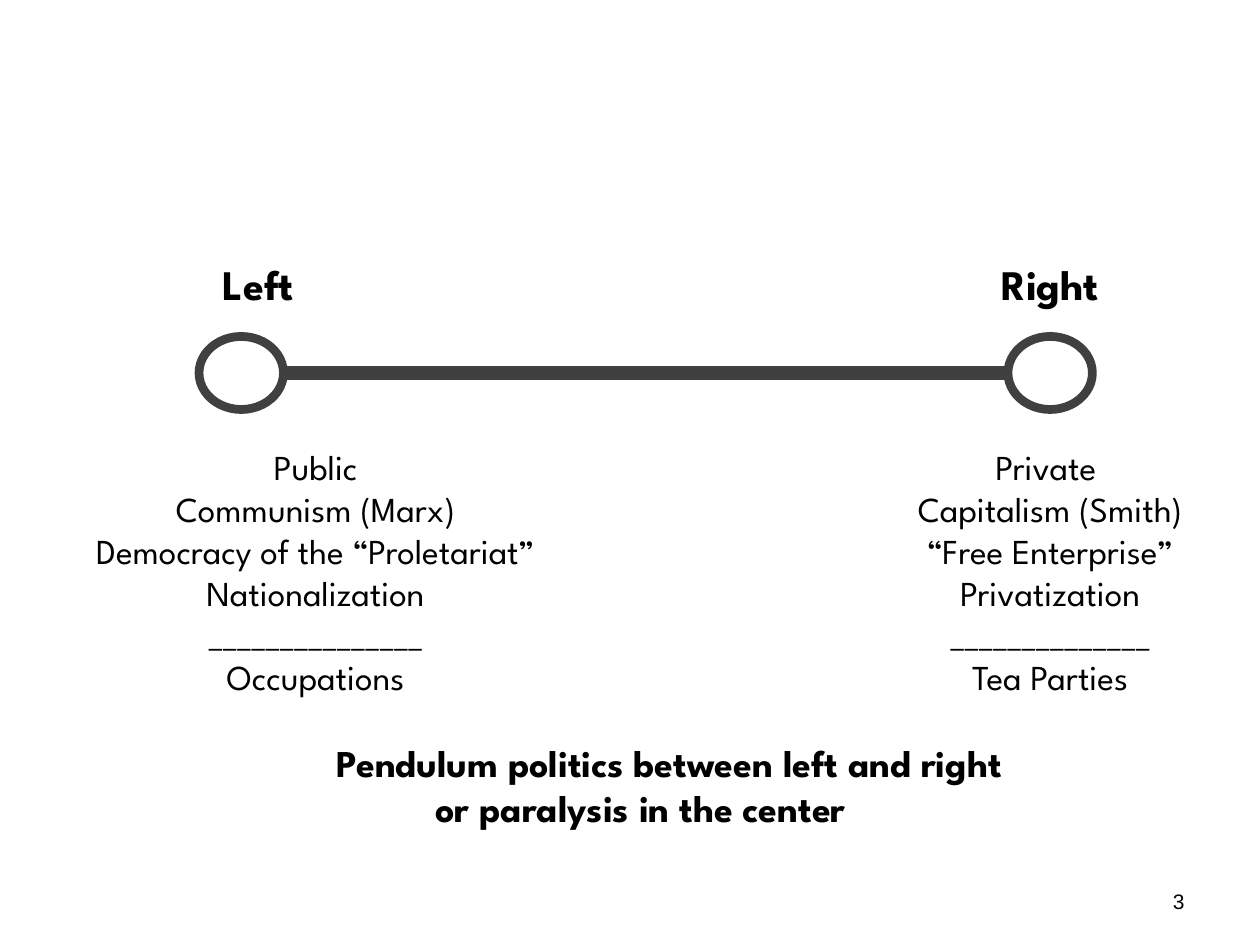
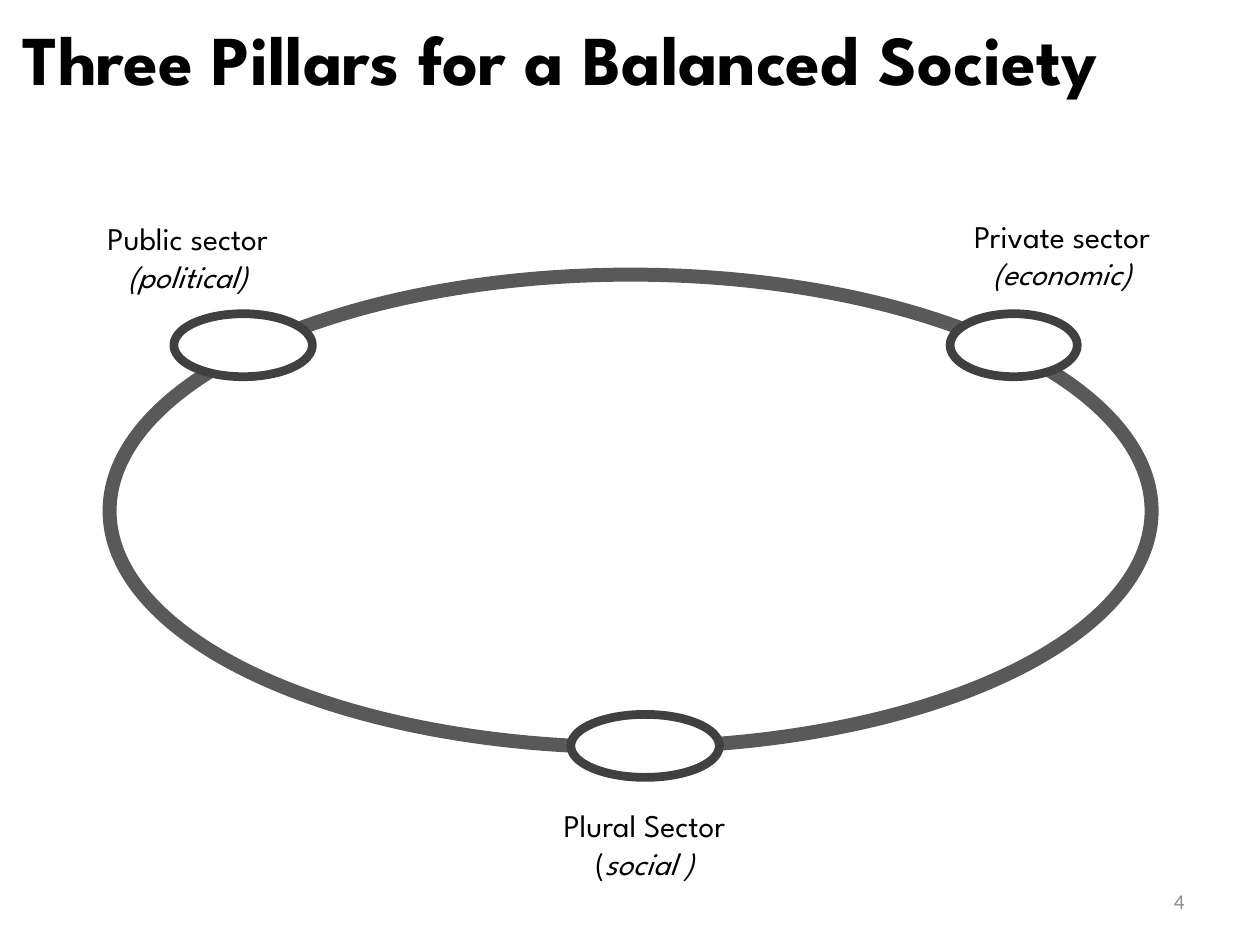
from lxml.etree import SubElement
from pptx import Presentation
from pptx.dml.color import RGBColor
from pptx.enum.shapes import MSO_CONNECTOR, MSO_SHAPE
from pptx.enum.text import MSO_ANCHOR, PP_ALIGN
from pptx.oxml.ns import qn
from pptx.util import Inches, Pt

# Grid of tenth-of-an-inch cells covering a 4:3 slide
COLUMNS, ROWS = 100, 75
CELL = Inches(0.1)

BLACK = RGBColor(0x00, 0x00, 0x00)
WHITE = RGBColor(0xFF, 0xFF, 0xFF)
DARK = RGBColor(0x40, 0x40, 0x40)
RING = RGBColor(0x59, 0x59, 0x59)
MUTED = RGBColor(0x8C, 0x8C, 0x8C)

FONT = "League Spartan"
NODE_LINE, LINK_LINE = 5, 8
LIST_GAP = 78  # points between a heading and its list, room for the node


def cells(*counts):
    return [round(count * CELL) for count in counts]


def style_span(span, size, bold=False, italic=False, font=FONT, color=BLACK):
    span.font.name = font
    span.font.size = Pt(size)
    span.font.bold = bold
    span.font.italic = italic
    span.font.color.rgb = color


def add_text(page, area, lines, size, align=PP_ALIGN.CENTER,
             anchor=MSO_ANCHOR.TOP, **style):
    """Add a text box with one paragraph per line and return its paragraphs."""
    frame = page.shapes.add_textbox(*cells(*area)).text_frame
    frame.word_wrap = True
    frame.vertical_anchor = anchor
    frame.text = "\n".join(lines)
    for para in frame.paragraphs:
        para.alignment = align
        for span in para.runs:
            style_span(span, size, **style)
    return frame.paragraphs


def indent(para, columns):
    para._p.get_or_add_pPr().set("marL", str(cells(columns)[0]))


def add_ellipse(page, area, color, width, filled=True):
    ellipse = page.shapes.add_shape(MSO_SHAPE.OVAL, *cells(*area))
    ellipse.shadow.inherit = False
    if filled:
        ellipse.fill.solid()
        ellipse.fill.fore_color.rgb = WHITE
    else:
        ellipse.fill.background()
    ellipse.line.color.rgb = color
    ellipse.line.width = Pt(width)


def add_node(page, area):
    add_ellipse(page, area, DARK, NODE_LINE)


def add_link(page, start, end):
    link = page.shapes.add_connector(MSO_CONNECTOR.STRAIGHT, *cells(*start, *end))
    link.line.color.rgb = DARK
    link.line.width = Pt(LINK_LINE)
    SubElement(link._element.spPr, qn("a:effectLst"))


def add_page_number(page, number, font, color):
    add_text(page, (71.7, 69.5, 23.3, 4), [number], 12, PP_ALIGN.RIGHT,
             MSO_ANCHOR.MIDDLE, font=font, color=color)


def add_side(page, area, heading, items):
    """Add one end of the spectrum: bold heading, gap, list of ideas."""
    paragraphs = add_text(page, area, [heading, *items], 20)
    style_span(paragraphs[0].runs[0], 24, bold=True)
    paragraphs[1].space_before = Pt(LIST_GAP)
    return paragraphs[0]


def add_sector(page, area, name, nature, opening="", anchor=MSO_ANCHOR.TOP):
    """Add a sector label whose second line is italic after its opening."""
    second = add_text(page, area, [name, opening], 18, anchor=anchor)[1]
    span = second.add_run()
    span.text = nature
    style_span(span, 18, italic=True)


def build_spectrum(page):
    add_page_number(page, "3", "Arial", BLACK)

    # Closing statement, first line set slightly to the right
    statement = add_text(
        page, (11.1, 54.8, 80.3, 15),
        ["Pendulum politics between left and right", "or paralysis in the center "],
        21.6, anchor=MSO_ANCHOR.MIDDLE, bold=True)
    indent(statement[0], 3.8)

    # The two sides
    add_side(page, (69.2, 20, 28.3, 36.2), "Right",
             ["Private ", "Capitalism (Smith)", "“Free Enterprise”",
              "Privatization", "_" * 14, "Tea Parties"])
    left_heading = add_side(
        page, (1.7, 20, 46.7, 36.2), "Left",
        ["Public", "Communism (Marx)", "Democracy of the “Proletariat”",
         "Nationalization", "_" * 15, "Occupations"])
    left_heading.alignment = PP_ALIGN.LEFT
    indent(left_heading, 15)

    # Nodes joined by a bar
    left, right, top, width, height = 15.8, 80, 26.7, 6.7, 5.8
    for column in (left, right):
        add_node(page, (column, top, width, height))
    middle = top + height / 2
    add_link(page, (left + width, middle), (right, middle))


def build_pillars(page):
    add_ellipse(page, (8.7, 21.8, 82.7, 37.5), RING, LINK_LINE, filled=False)
    add_page_number(page, "4", "Calibri", MUTED)
    add_text(page, (0.8, 0.7, 98.4, 14.5), ["Three Pillars for a Balanced Society"],
             40, PP_ALIGN.LEFT, bold=True)

    # Pillars on the ring
    for column, row, width in ((45.3, 56.7, 11.8), (13.8, 24.9, 11),
                               (75.4, 24.9, 10.1)):
        add_node(page, (column, row, width, 5))

    # Sector labels
    add_sector(page, (29.5, 61.7, 43.3, 10.6), "Plural Sector", "social )",
               opening="(", anchor=MSO_ANCHOR.MIDDLE)
    add_sector(page, (3.5, 16.9, 22.8, 7.1), "Public sector", "(political)")
    add_sector(page, (70.5, 16.7, 27.6, 7.1), "Private sector", "(economic)")


def main():
    deck = Presentation()
    deck.slide_width, deck.slide_height = cells(COLUMNS, ROWS)
    blank = deck.slide_layouts[6]
    for build in (build_spectrum, build_pillars):
        build(deck.slides.add_slide(blank))
    deck.save("out.pptx")


if __name__ == "__main__":
    main()
